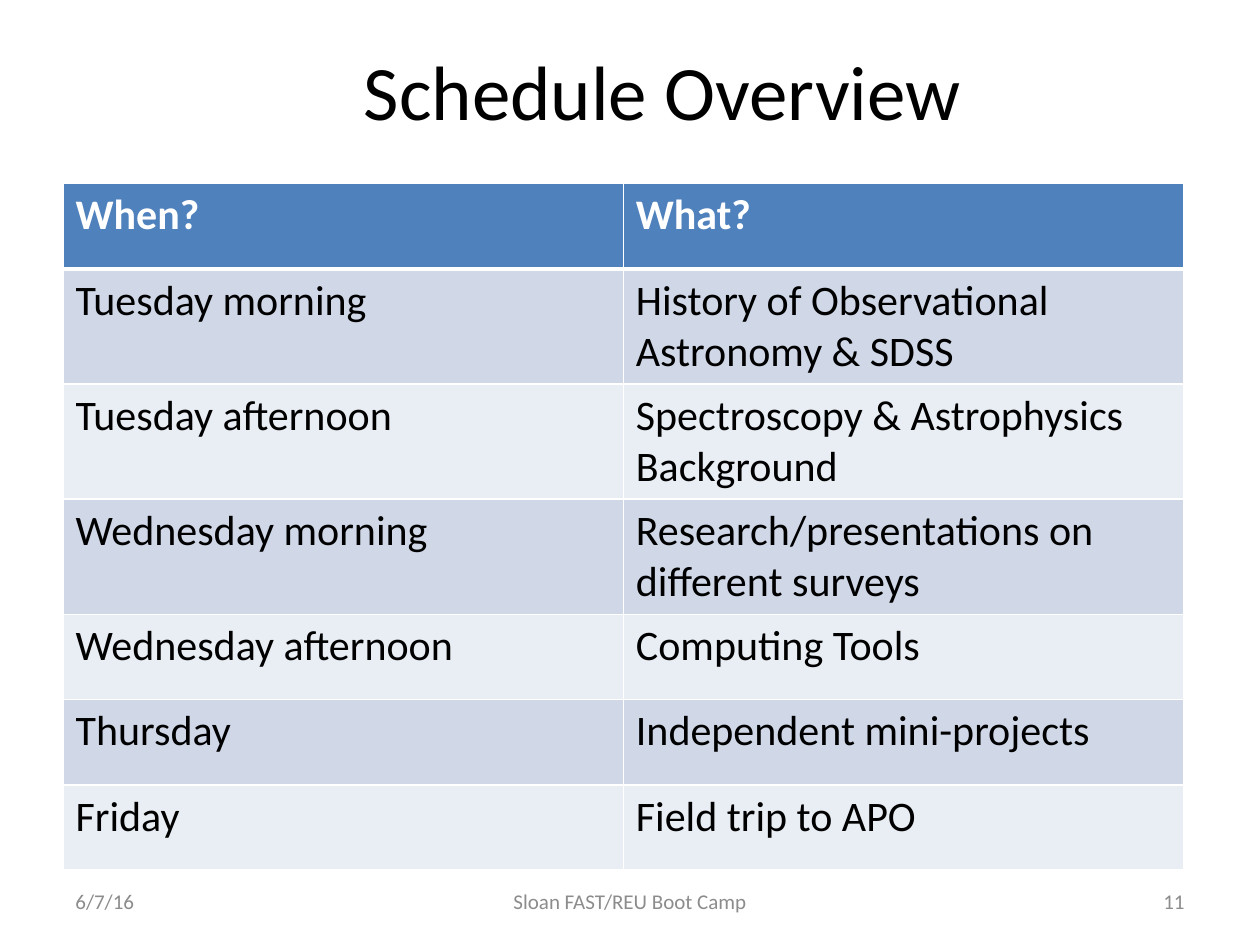
from dataclasses import dataclass

from lxml.etree import SubElement
from pptx import Presentation
from pptx.dml.color import RGBColor as RGB
from pptx.enum.text import MSO_ANCHOR as Anchor, PP_ALIGN as Align
from pptx.oxml.ns import qn
from pptx.slide import Slide
from pptx.table import _Cell as Cell
from pptx.text.text import TextFrame
from pptx.util import Pt


@dataclass(frozen=True)
class Theme:
    font: str = "Calibri"
    ink: str = "000000"
    white: str = "FFFFFF"
    gray: str = "8C8C8C"
    head: str = "4F81BD"
    bands: tuple[str, str] = ("D0D8E8", "E9EDF4")
    title: int = 44
    body: int = 24
    small: int = 12
    thin: int = 1
    thick: int = 3


@dataclass(frozen=True)
class Label:
    text: str
    left: float
    top: float
    width: float
    height: float
    size: int
    color: str
    align: Align


THEME = Theme()
FOOT = (500.4, 28.8)  # top and height of the footer line
LABELS = [
    Label("Schedule Overview", 185, 5.8, 387.4, 90.7, THEME.title, THEME.ink, Align.CENTER),
    Label("6/7/16", 36, FOOT[0], 168, FOOT[1], THEME.small, THEME.gray, Align.LEFT),
    Label("Sloan FAST/REU Boot Camp", 246, FOOT[0], 228, FOOT[1],
          THEME.small, THEME.gray, Align.CENTER),
    Label("11", 516, FOOT[0], 168, FOOT[1], THEME.small, THEME.gray, Align.RIGHT),
]
PLAN = [
    ("When?", "What?"),
    ("Tuesday morning", "History of Observational Astronomy & SDSS"),
    ("Tuesday afternoon", "Spectroscopy & Astrophysics Background"),
    ("Wednesday morning", "Research/presentations on different surveys"),
    ("Wednesday afternoon", "Computing Tools"),
    ("Thursday", "Independent mini-projects"),
    ("Friday", "Field trip to APO"),
]


def write(frame: TextFrame, text: str, size: int, color: str,
          align: Align = Align.LEFT, bold: bool = False) -> None:
    frame.text = text
    para = frame.paragraphs[0]
    para.alignment = align
    font = para.runs[0].font
    font.name, font.size, font.bold = THEME.font, Pt(size), bold
    font.color.rgb = RGB.from_string(color)


def add_label(slide: Slide, item: Label) -> None:
    box = slide.shapes.add_textbox(Pt(item.left), Pt(item.top), Pt(item.width), Pt(item.height))
    frame = box.text_frame
    frame.word_wrap = True
    frame.vertical_anchor = Anchor.MIDDLE
    write(frame, item.text, item.size, item.color, item.align)


def add_edges(cell: Cell, top: int, bottom: int) -> None:
    """Draw white borders; must run before the cell is filled."""
    props = cell._tc.get_or_add_tcPr()
    for side, width in zip("LRTB", (THEME.thin, THEME.thin, top, bottom)):
        line = SubElement(props, qn(f"a:ln{side}"), w=str(Pt(width)))
        fill = SubElement(line, qn("a:solidFill"))
        SubElement(fill, qn("a:srgbClr"), val=THEME.white)


def add_plan(slide: Slide, rows: list[tuple[str, str]]) -> None:
    high, wide = 48.7, 320.2
    count = len(rows)
    table = slide.shapes.add_table(count, 2, Pt(36), Pt(105), Pt(2 * wide), Pt(count * high)).table
    for col in table.columns:
        col.width = Pt(wide)
    for i, row in enumerate(rows):
        table.rows[i].height = Pt(high)
        head = i == 0
        fill = THEME.head if head else THEME.bands[(i - 1) % 2]
        for j, text in enumerate(row):
            cell = table.cell(i, j)
            add_edges(cell, THEME.thick if i == 1 else THEME.thin,
                      THEME.thick if head else THEME.thin)
            cell.fill.solid()
            cell.fill.fore_color.rgb = RGB.from_string(fill)
            write(cell.text_frame, text, THEME.body,
                  THEME.white if head else THEME.ink, bold=head)


def main() -> None:
    deck = Presentation()
    deck.slide_width, deck.slide_height = Pt(720), Pt(540)
    slide = deck.slides.add_slide(deck.slide_layouts[6])
    add_plan(slide, PLAN)
    for item in LABELS:
        add_label(slide, item)
    deck.save("out.pptx")


if __name__ == "__main__":
    main()
